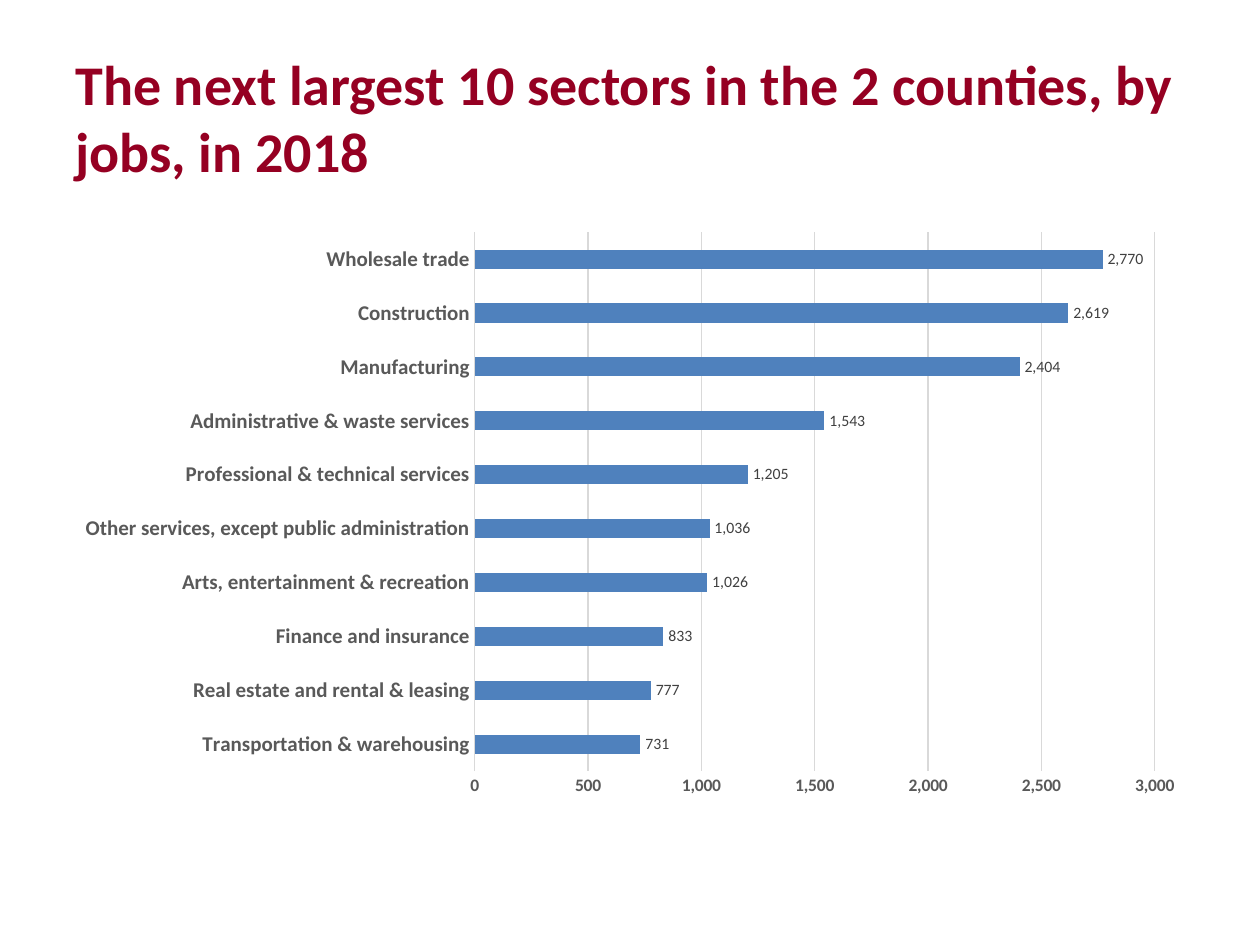
from pptx import Presentation
from pptx.chart.data import CategoryChartData
from pptx.dml.color import RGBColor
from pptx.enum.chart import XL_CHART_TYPE, XL_LABEL_POSITION, XL_TICK_MARK
from pptx.enum.text import MSO_ANCHOR
from pptx.util import Inches, Pt

COLORS = {
    "title": "950022",
    "bar": "4F81BD",
    "axis": "595959",
    "label": "404040",
    "grid": "D9D9D9",
    "text": "000000",
}

JOBS_BY_SECTOR = {
    "Transportation & warehousing": 731,
    "Real estate and rental & leasing": 777,
    "Finance and insurance": 833,
    "Arts, entertainment & recreation": 1026,
    "Other services, except public administration": 1036,
    "Professional & technical services": 1205,
    "Administrative & waste services": 1543,
    "Manufacturing": 2404,
    "Construction": 2619,
    "Wholesale trade": 2770,
}


class SlideBuilder:
    typeface = "Calibri"
    number_format = "#,##0"

    def __init__(self, presentation):
        self.slide = presentation.slides.add_slide(presentation.slide_layouts[6])

    def color(self, role):
        return RGBColor.from_string(COLORS[role])

    def style_font(self, font, size, role, bold=False):
        font.name = self.typeface
        font.size = Pt(size)
        font.bold = bold
        font.color.rgb = self.color(role)

    def style_line(self, line):
        line.color.rgb = self.color("grid")
        line.width = Pt(0.75)

    def add_title(self, wording, left, top, width, height):
        title = self.slide.shapes.add_textbox(
            Inches(left), Inches(top), Inches(width), Inches(height)
        ).text_frame
        title.word_wrap = True
        title.vertical_anchor = MSO_ANCHOR.MIDDLE
        heading = title.paragraphs[0]
        heading.text = wording
        self.style_font(heading.font, 32, "title", bold=True)

    def style_axis(self, axis, size):
        axis.major_tick_mark = XL_TICK_MARK.NONE
        axis.minor_tick_mark = XL_TICK_MARK.NONE
        self.style_font(axis.tick_labels.font, size, "axis", bold=True)

    def add_bar_chart(self, jobs, left, top, width, height):
        data = CategoryChartData(number_format=self.number_format)
        data.categories = list(jobs)
        data.add_series("Series 1", list(jobs.values()))
        chart = self.slide.shapes.add_chart(
            XL_CHART_TYPE.BAR_CLUSTERED,
            Inches(left), Inches(top), Inches(width), Inches(height), data,
        ).chart
        chart.has_title = False
        chart.has_legend = False
        self.style_font(chart.font, 10, "text")

        sectors = chart.category_axis
        self.style_axis(sectors, 12)
        sectors.has_major_gridlines = False
        self.style_line(sectors.format.line)

        scale = chart.value_axis
        self.style_axis(scale, 10)
        scale.minimum_scale = 0
        scale.maximum_scale = 3000
        scale.major_unit = 500
        scale.format.line.fill.background()
        scale.has_major_gridlines = True
        self.style_line(scale.major_gridlines.format.line)
        scale.tick_labels.number_format = self.number_format
        scale.tick_labels.number_format_is_linked = False

        plot = chart.plots[0]
        plot.gap_width = 182
        plot.vary_by_categories = False
        bars = plot.series[0]
        bars.invert_if_negative = False
        bars.format.fill.solid()
        bars.format.fill.fore_color.rgb = self.color("bar")

        labels = bars.data_labels
        labels.show_value = True
        labels.position = XL_LABEL_POSITION.OUTSIDE_END
        labels.number_format = self.number_format
        labels.number_format_is_linked = False
        self.style_font(labels.font, 9, "label")


def main():
    presentation = Presentation()
    presentation.slide_width = Inches(10)
    presentation.slide_height = Inches(7.5)
    builder = SlideBuilder(presentation)
    builder.add_title(
        "The next largest 10 sectors in the 2 counties, by jobs, in 2018",
        0.5, 0.3, 9, 1.25,
    )
    builder.add_bar_chart(JOBS_BY_SECTOR, 0.5, 1.75, 9, 4.66)
    presentation.save("out.pptx")


if __name__ == "__main__":
    main()
